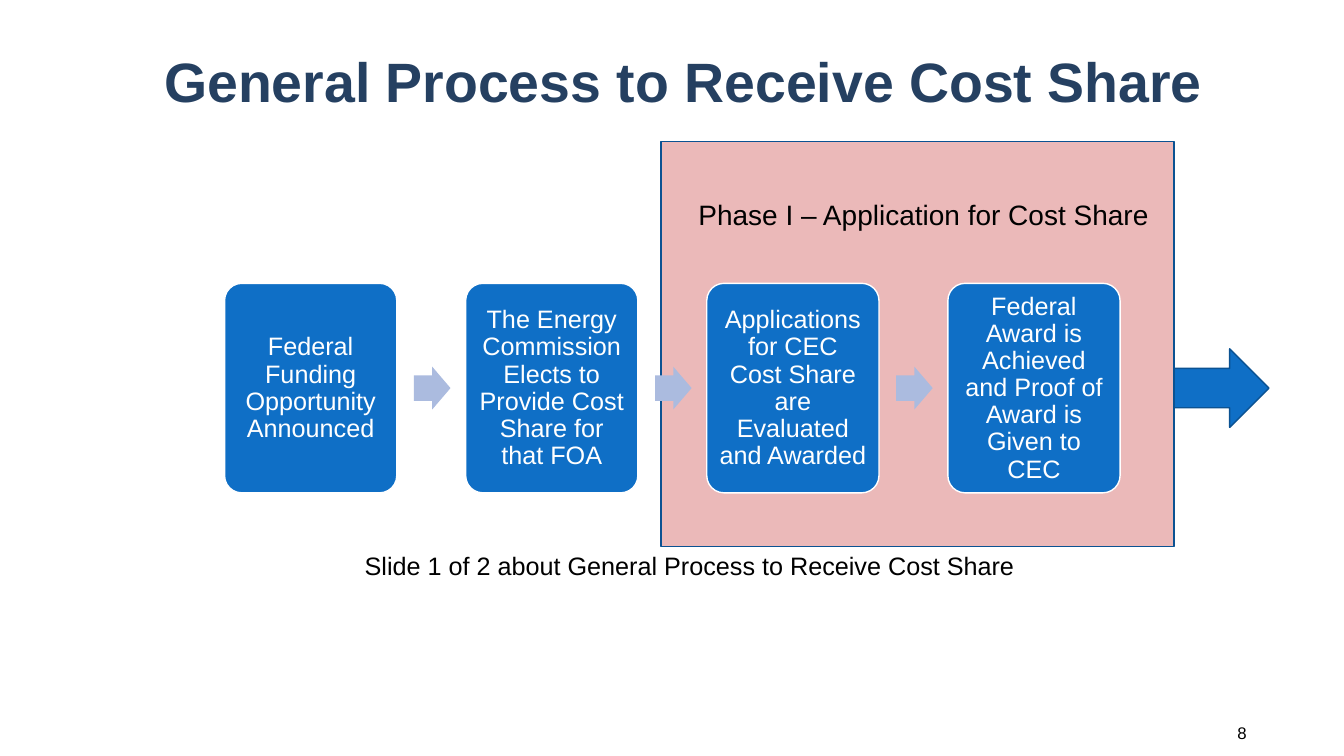
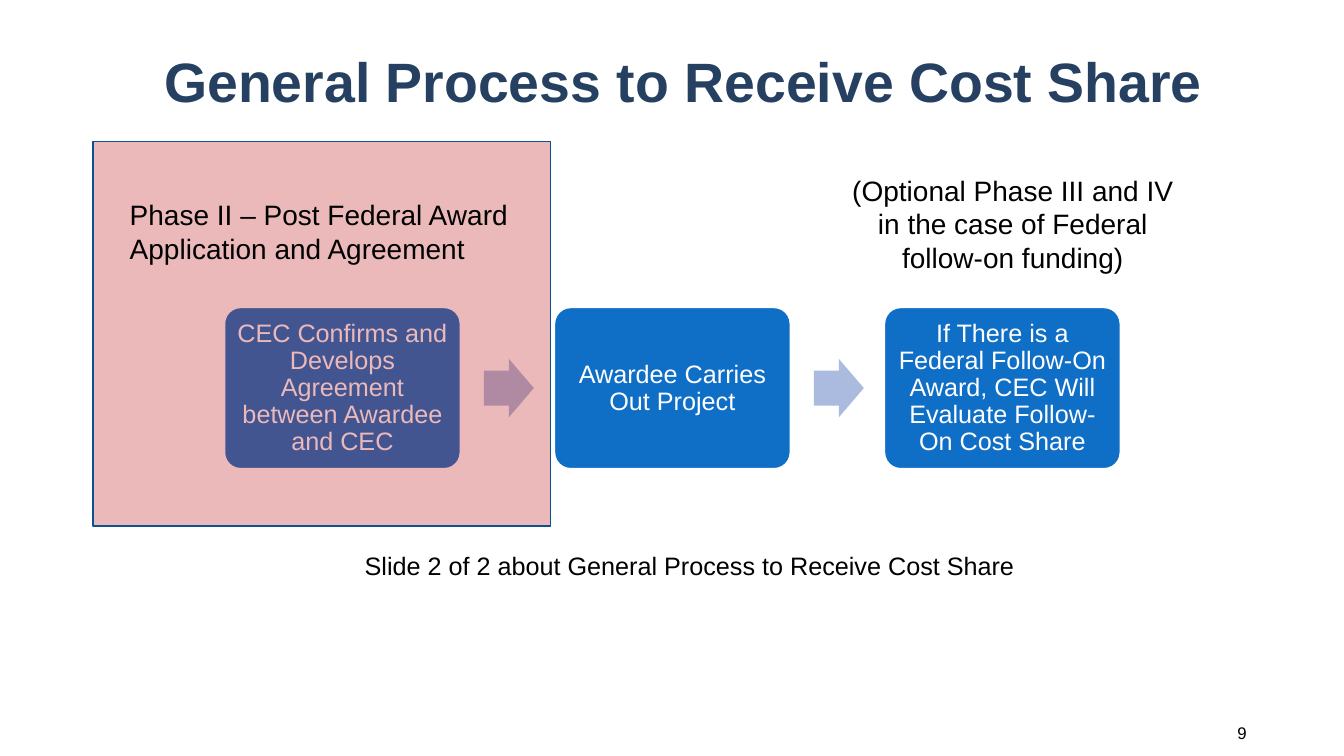
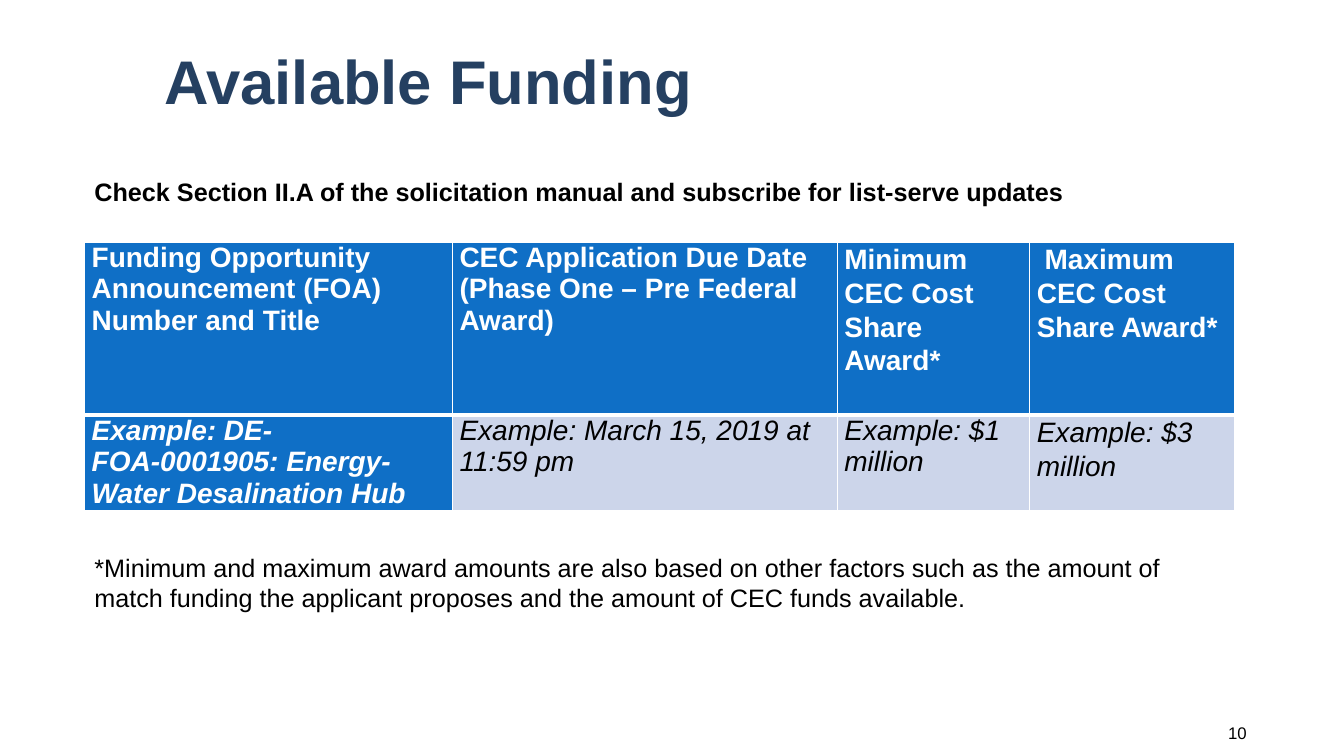
from lxml.etree import SubElement
from pptx import Presentation
from pptx.dml.color import RGBColor
from pptx.enum.shapes import MSO_SHAPE as Shape
from pptx.enum.text import MSO_ANCHOR as Anchor, PP_ALIGN as Align
from pptx.oxml.ns import qn
from pptx.util import Cm, Pt

NAVY = RGBColor(0x25, 0x40, 0x61)
BLUE = RGBColor(0x0F, 0x6F, 0xC6)
DARK_BLUE = RGBColor(0x0B, 0x52, 0x92)
ARROW_BLUE = RGBColor(0xAB, 0xBB, 0xDF)
PALE_BLUE = RGBColor(0xCC, 0xD5, 0xEA)
RED = RGBColor(0xBD, 0x19, 0x19)
WHITE = RGBColor(0xFF, 0xFF, 0xFF)
BLACK = RGBColor(0x00, 0x00, 0x00)
FONT = "Arial"


def write_text(frame, text, size=18, color=BLACK, bold=False, italic=False,
               align=Align.LEFT, anchor=Anchor.TOP, leading=1.2):
    frame.word_wrap = True
    frame.vertical_anchor = anchor
    paragraph = frame.paragraphs[0]
    paragraph.alignment = align
    paragraph.line_spacing = Pt(round(size * leading, 1))
    run = paragraph.add_run()
    run.text = text
    font = run.font
    font.name, font.size, font.bold, font.italic = FONT, Pt(size), bold, italic
    font.color.rgb = color


def set_borders(cell, bottom=1, top=1):
    properties = cell._tc.get_or_add_tcPr()
    for side, width in (("L", 1), ("R", 1), ("T", top), ("B", bottom)):
        border = SubElement(properties, qn(f"a:ln{side}"), w=str(Pt(width)))
        fill = SubElement(border, qn("a:solidFill"))
        SubElement(fill, qn("a:srgbClr"), val=str(WHITE))


class Deck:
    middle = 9.78
    process_left = 5.66

    def __init__(self):
        self.presentation = Presentation()
        self.presentation.slide_width = Cm(33.87)
        self.presentation.slide_height = Cm(19.05)
        self.slide = None

    def start(self, title, number, title_size=39.6):
        layout = self.presentation.slide_layouts[6]
        self.slide = self.presentation.slides.add_slide(layout)
        self.text(title, 3.89, 0.66, 27.66, 2.9, size=title_size, color=NAVY,
                  bold=True, anchor=Anchor.MIDDLE, leading=1.08)
        self.text(str(number), 26.67, 17.96, 5, 1.02, size=12,
                  align=Align.RIGHT, anchor=Anchor.MIDDLE)

    def text(self, text, left, top, width, height, **style):
        box = self.slide.shapes.add_textbox(Cm(left), Cm(top), Cm(width), Cm(height))
        write_text(box.text_frame, text, **style)

    def shape(self, kind, left, top, width, height, fill, line=None, adjust=()):
        shape = self.slide.shapes.add_shape(
            kind, Cm(left), Cm(top), Cm(width), Cm(height))
        shape.shadow.inherit = False
        shape.fill.solid()
        shape.fill.fore_color.rgb = fill
        if line is None:
            shape.line.fill.background()
        else:
            shape.line.color.rgb = line
            shape.line.width = Pt(1)
        for index, value in enumerate(adjust):
            shape.adjustments[index] = value
        return shape

    def phase_panel(self, left, width, height):
        panel = self.shape(Shape.RECTANGLE, left, 3.56, width, height, RED, DARK_BLUE)
        color = panel.fill._xPr.find(f".//{qn('a:srgbClr')}")
        SubElement(color, qn("a:alpha"), val="30000")

    def process(self, steps, width, height):
        arrow_height = 0.248 * width
        for index, step in enumerate(steps):
            left = self.process_left + index * 1.4 * width
            if index:
                self.shape(Shape.RIGHT_ARROW, left - 0.3 * width,
                           self.middle - arrow_height / 2, 0.212 * width,
                           arrow_height, ARROW_BLUE, adjust=(0.6, 0.5))
            box = self.shape(Shape.ROUNDED_RECTANGLE, left, self.middle - height / 2,
                             width, height, BLUE, WHITE, adjust=(0.1,))
            frame = box.text_frame
            frame.margin_left = frame.margin_right = Cm(0.18)
            frame.margin_top = frame.margin_bottom = Cm(0.18)
            write_text(frame, step, color=WHITE, align=Align.CENTER,
                       anchor=Anchor.MIDDLE, leading=1.08)

    def caption(self, part):
        self.text(f"Slide {part} of 2 about General Process to Receive Cost Share",
                  8.94, 13.74, 18.85, 1.02)

    def table(self, rows, left, top, widths, heights, leadings):
        table = self.slide.shapes.add_table(
            len(rows), len(widths), Cm(left), Cm(top),
            Cm(sum(widths)), Cm(sum(heights))).table
        table.horz_banding = False
        for column, width in zip(table.columns, widths):
            column.width = Cm(width)
        for r, (row, height) in enumerate(zip(rows, heights)):
            table.rows[r].height = Cm(height)
            for c, text in enumerate(row):
                cell = table.cell(r, c)
                heading = r == 0 or c == 0
                set_borders(cell, bottom=3 if r == 0 else 1, top=3 if r else 1)
                cell.fill.solid()
                cell.fill.fore_color.rgb = BLUE if heading else PALE_BLUE
                cell.margin_left = cell.margin_right = Cm(0.18)
                cell.margin_top = cell.margin_bottom = 0
                write_text(cell.text_frame, text, size=20, bold=heading,
                           italic=r > 0, color=WHITE if heading else BLACK,
                           leading=leadings[r][c])


def main():
    deck = Deck()

    deck.start("General Process to Receive Cost Share", 8)
    deck.phase_panel(16.66, 12.93, 10.21)
    deck.process([
        "Federal Funding Opportunity Announced",
        "The Energy Commission Elects to Provide Cost Share for that FOA",
        "Applications for CEC Cost Share are Evaluated and Awarded",
        "Federal Award is Achieved and Proof of Award is Given to CEC",
    ], 4.34, 5.28)
    deck.text("Phase I – Application for Cost Share", 17.35, 4.85, 11.94, 1.12, size=20)
    deck.caption(1)
    deck.shape(Shape.RIGHT_ARROW, 29.59, 8.79, 2.39, 1.98, BLUE, DARK_BLUE)

    deck.start("General Process to Receive Cost Share", 9)
    deck.process([
        "CEC Confirms and Develops Agreement between Awardee and CEC",
        "Awardee Carries Out Project",
        "If There is a Federal Follow-On Award, CEC Will Evaluate "
        "Follow-On Cost Share",
    ], 5.94, 4.06)
    deck.caption(2)
    deck.phase_panel(2.34, 11.53, 9.7)
    deck.text("Phase II – Post Federal Award Application and Agreement",
              3.02, 4.85, 10.41, 1.96, size=20)
    deck.text("(Optional Phase III and IV in the case of Federal follow-on funding)",
              21.13, 4.24, 8.79, 2.82, size=20, align=Align.CENTER)

    deck.start("Available Funding", 10, title_size=44)
    deck.table([
        ["Funding Opportunity Announcement (FOA) Number and Title",
         "CEC Application Due Date (Phase One – Pre Federal Award)",
         "Minimum CEC Cost Share Award*",
         " Maximum CEC Cost Share Award*"],
        ["Example: DE-FOA-0001905: Energy-Water Desalination Hub",
         "Example: March 15, 2019 at 11:59 pm",
         "Example: $1 million",
         "Example: $3 million"],
    ], 2.13, 6.1, [9.27, 9.7, 4.85, 5.16], [4.36, 2.4],
        [[1.12, 1.12, 1.2, 1.2], [1.12, 1.12, 1.12, 1.2]])
    deck.text("Check Section II.A of the solicitation manual and subscribe "
              "for list-serve updates", 2.13, 4.32, 27.66, 1.02,
              bold=True, align=Align.JUSTIFY, anchor=Anchor.MIDDLE)
    deck.text("*Minimum and maximum award amounts are also based on other factors "
              "such as the amount of match funding the applicant proposes and "
              "the amount of CEC funds available.", 2.13, 13.79, 28.98, 1.8)

    deck.presentation.save("out.pptx")


if __name__ == "__main__":
    main()
